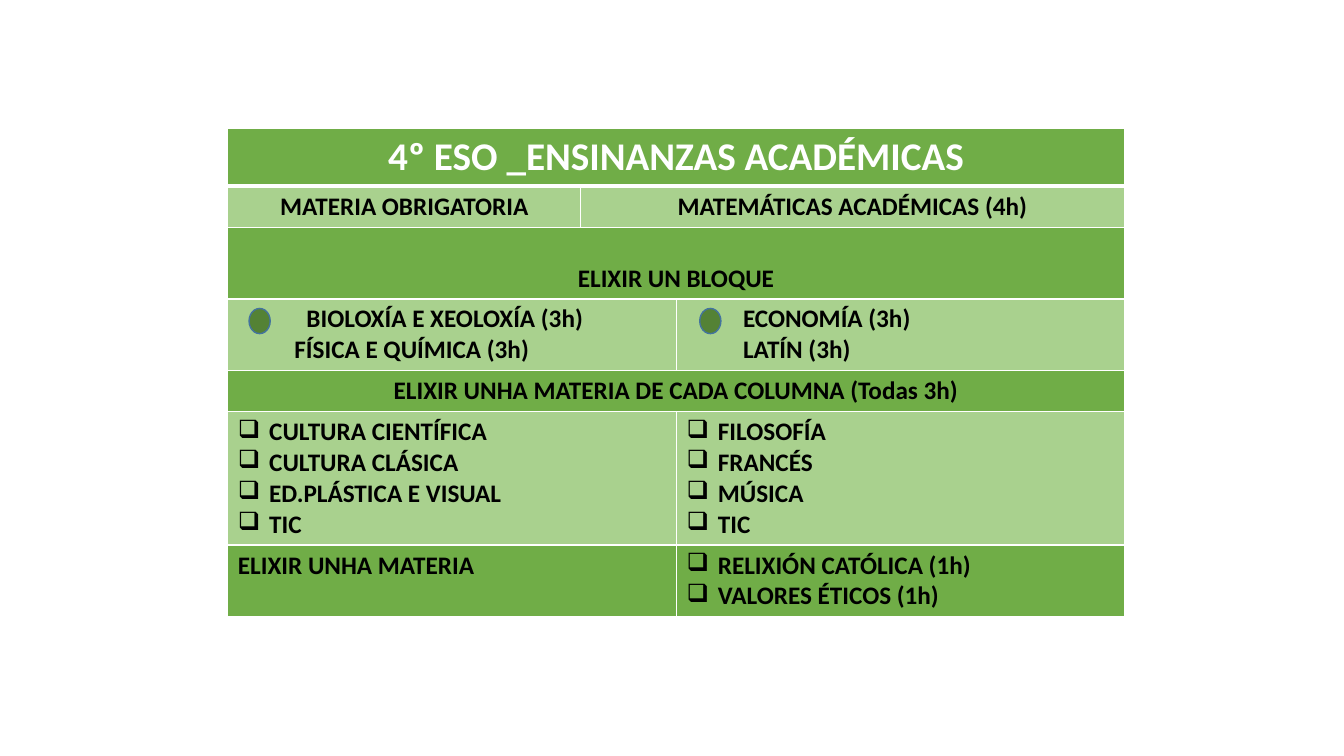
from lxml import etree
from pptx import Presentation
from pptx import util as u
from pptx.dml.color import RGBColor
from pptx.enum import shapes, text
from pptx.oxml.ns import qn

PX = 9144
DARK, LIGHT, WHITE, BLACK = "70AD47", "A9D18E", "FFFFFF", "000000"
CENTER = {"alignment": text.PP_ALIGN.CENTER}
CHECK = {"bullet": "❑", "margin": 31}


def px(length):
    return u.Emu(length * PX)


def rgb(value):
    return RGBColor.from_string(value)


class Sheet:
    def __init__(self, deck, font):
        self.font = font
        self.slide = deck.slides.add_slide(deck.slide_layouts[6])

    def apply(self, target, values):
        for key, value in values.items():
            setattr(target, key, value)

    def table(self, left, top, widths, rows):
        heights = [row[0] for row in rows]
        grid = self.slide.shapes.add_table(
            len(rows), len(widths), px(left), px(top),
            px(sum(widths)), px(sum(heights))).table
        for column, width in zip(grid.columns, widths):
            column.width = px(width)
        for index, (height, fill, blocks) in enumerate(rows):
            grid.rows[index].height = px(height)
            for column in range(len(widths)):
                self.cell_style(grid.cell(index, column), fill, index)
            for first, last, lines, style in blocks:
                cell = grid.cell(index, first)
                if last > first:
                    cell.merge(grid.cell(index, last))
                self.cell_text(cell, lines, style)

    def cell_style(self, cell, fill, row):
        properties = cell._tc.get_or_add_tcPr()
        weights = {"lnL": 1, "lnR": 1, "lnT": 3 if row == 1 else 1,
                   "lnB": 3 if row == 0 else 1}
        for side, weight in weights.items():
            border = etree.SubElement(properties, qn("a:" + side), w=str(u.Pt(weight)))
            solid = etree.SubElement(border, qn("a:solidFill"))
            etree.SubElement(solid, qn("a:srgbClr"), val=WHITE)
        cell.fill.solid()
        cell.fill.fore_color.rgb = rgb(fill)

    def cell_text(self, cell, lines, style):
        cell.vertical_anchor = style.get("anchor", text.MSO_ANCHOR.TOP)
        frame = cell.text_frame
        frame.text = "\n".join(lines)
        margins = style.get("margins", [style.get("margin", 0)] * len(lines))
        for paragraph, margin in zip(frame.paragraphs, margins):
            properties = paragraph._p.get_or_add_pPr()
            properties.set("marL", str(px(margin)))
            if "bullet" in style:
                properties.set("indent", str(-px(margin)))
                etree.SubElement(properties, qn("a:buChar"), char=style["bullet"])
            self.apply(paragraph, {"alignment": style.get("alignment", text.PP_ALIGN.LEFT)})
            for run in paragraph.runs:
                self.apply(run.font, {"name": self.font, "bold": True,
                                      "size": u.Pt(style.get("size", 18))})
                run.font.color.rgb = rgb(style.get("color", BLACK))

    def dot(self, left, top, width, height):
        dot = self.slide.shapes.add_shape(
            shapes.MSO_SHAPE.OVAL, px(left), px(top), px(width), px(height))
        dot.shadow.inherit = False
        dot.fill.solid()
        dot.fill.fore_color.rgb = rgb("548235")
        dot.line.color.rgb = rgb("43739E")
        dot.line.width = u.Pt(1)


def main():
    deck = Presentation()
    deck.slide_width, deck.slide_height = px(1333), px(750)
    sheet = Sheet(deck, "Calibri")
    subjects = [
        (57, DARK, [(0, 2, ["4º ESO _ENSINANZAS ACADÉMICAS"],
                     {**CENTER, "size": 28, "color": WHITE})]),
        (41, LIGHT, [(0, 0, ["MATERIA OBRIGATORIA"], CENTER),
                     (1, 2, ["MATEMÁTICAS ACADÉMICAS (4h)"], CENTER)]),
        (71, DARK, [(0, 2, ["ELIXIR UN BLOQUE"],
                     {**CENTER, "anchor": text.MSO_ANCHOR.BOTTOM})]),
        (71, LIGHT, [(0, 1, ["BIOLOXÍA E XEOLOXÍA (3h)", "FÍSICA E QUÍMICA (3h)"],
                      {"margins": [68, 56]}),
                     (2, 2, ["ECONOMÍA (3h)", "LATÍN (3h)"], {"margin": 56})]),
        (41, DARK, [(0, 2, ["ELIXIR UNHA MATERIA DE CADA COLUMNA (Todas 3h)"], CENTER)]),
        (132, LIGHT, [(0, 1, ["CULTURA CIENTÍFICA", "CULTURA CLÁSICA",
                              "ED.PLÁSTICA E VISUAL", "TIC"], CHECK),
                      (2, 2, ["FILOSOFÍA", "FRANCÉS", "MÚSICA", "TIC"], CHECK)]),
        (71, DARK, [(0, 1, ["ELIXIR UNHA MATERIA"], {}),
                    (2, 2, ["RELIXIÓN CATÓLICA (1h)", "VALORES ÉTICOS (1h)"], CHECK)]),
    ]
    sheet.table(226, 127, [350, 95, 444], subjects)
    for block_left in (694, 247):
        sheet.dot(block_left, 306, 21, 25)
    deck.save("out.pptx")


if __name__ == "__main__":
    main()
